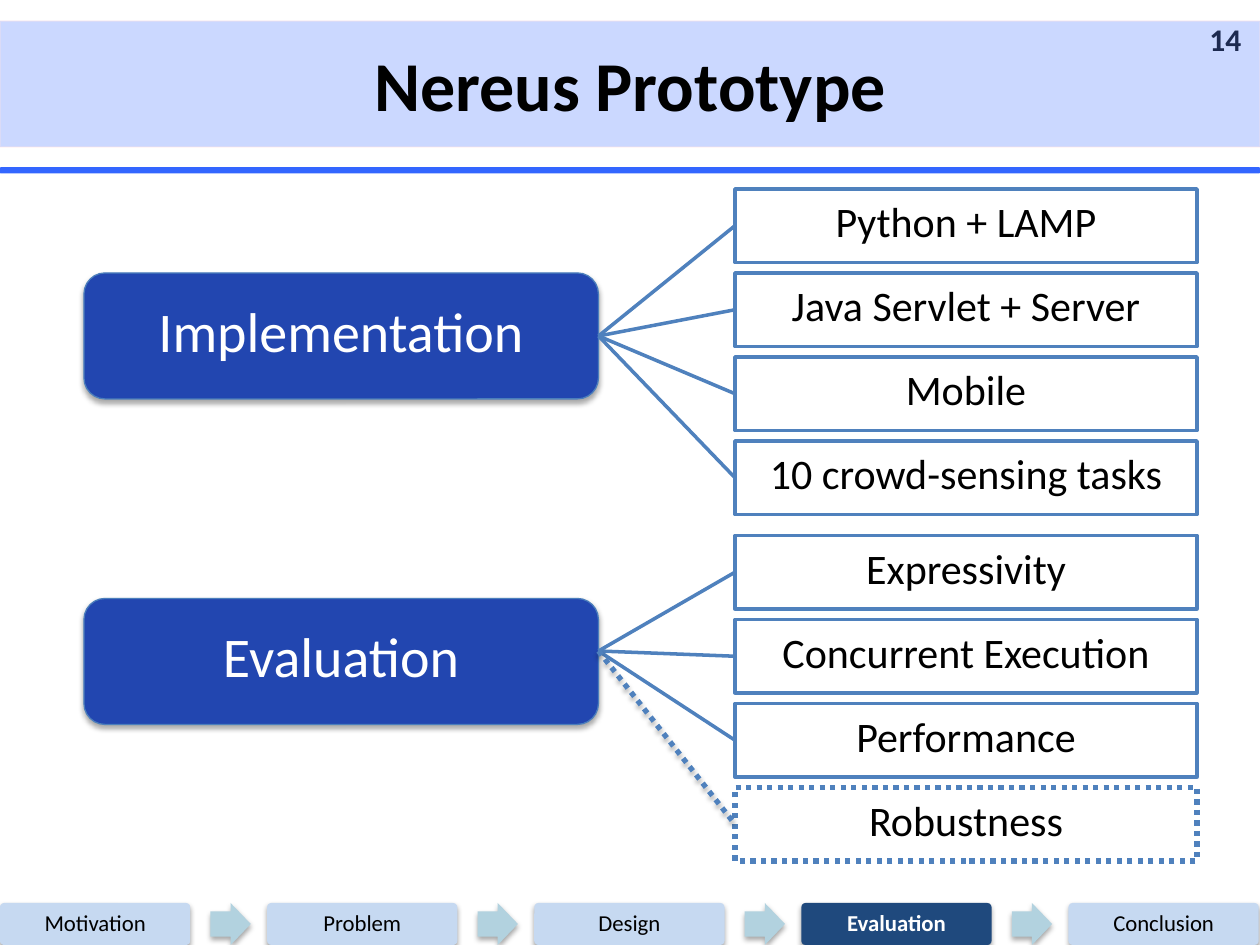
from lxml import etree
from pptx import Presentation
from pptx import util as u
from pptx.dml.color import RGBColor
from pptx.enum import dml, shapes, text
from pptx.oxml import ns

WIDTH, HEIGHT = u.Inches(10), u.Inches(7.5)
COL = WIDTH / 120  # the slide is a grid of 120 columns by 90 rows
ROW = HEIGHT / 90

BLACK = RGBColor(0x00, 0x00, 0x00)
WHITE = RGBColor(0xFF, 0xFF, 0xFF)
NUMBER_GREY = RGBColor(0x16, 0x16, 0x16)
RULE_BLUE = RGBColor(0x33, 0x66, 0xFF)
TITLE_EDGE = RGBColor(0xFF, 0xE4, 0xE5)
TOPIC_BLUE = RGBColor(0x22, 0x46, 0xB0)
TOPIC_EDGE = RGBColor(0x4B, 0x7E, 0xBC)
ITEM_EDGE = RGBColor(0x4F, 0x81, 0xBD)
STEP_BLUE = RGBColor(0xC6, 0xD9, 0xF1)
CURRENT_STEP = RGBColor(0x1F, 0x49, 0x7D)
ARROW_BLUE = RGBColor(0xB2, 0xD2, 0xDF)

SOLID = {"width": u.Pt(2)}
DOTTED = {"width": u.Pt(3), "dash_style": dml.MSO_LINE.ROUND_DOT}

TOPICS = [
    # topic, its row, row of the first item, row where the lines start, items
    ("Implementation", 26, 18, 32,
     ["Python + LAMP", "Java Servlet + Server", "Mobile", "10 crowd-sensing tasks"]),
    ("Evaluation", 57, 51, 62,
     ["Expressivity", "Concurrent Execution", "Performance", "Robustness"]),
]
DOTTED_ITEM = "Robustness"
STEPS = ["Motivation", "Problem", "Design", "Evaluation", "Conclusion"]


def grid(col, row, cols, rows):
    """Turn grid columns and rows into a box in EMU."""
    return [round(n) for n in (col * COL, row * ROW, cols * COL, rows * ROW)]


def apply(target, formats):
    for name, value in formats.items():
        setattr(target, name, value)


def set_shadow(part, visible):
    effects = etree.SubElement(part._element.spPr, ns.qn("a:effectLst"))
    if visible:
        shadow = etree.SubElement(effects, ns.qn("a:outerShdw"), blurRad=str(u.Pt(3.1)),
                                  dist=str(u.Pt(1.8)), dir="5400000", rotWithShape="0")
        black = etree.SubElement(shadow, ns.qn("a:srgbClr"), val="000000")
        etree.SubElement(black, ns.qn("a:alpha"), val="35000")


def set_opacity(color_format, percent):
    """Make a solid fill that is already coloured see-through."""
    color = color_format._xPr.find(".//" + ns.qn("a:srgbClr"))
    etree.SubElement(color, ns.qn("a:alpha"), val=str(percent * 1000))


def write(part, words, size, color, bold=False, paragraph_format=None, inset=None):
    frame = part.text_frame
    apply(frame, {"word_wrap": True, "auto_size": text.MSO_AUTO_SIZE.NONE,
                  "vertical_anchor": text.MSO_ANCHOR.MIDDLE})
    if inset is not None:
        apply(frame, dict.fromkeys(
            ("margin_left", "margin_top", "margin_right", "margin_bottom"), inset))
    paragraph = frame.paragraphs[0]
    apply(paragraph, {"alignment": text.PP_ALIGN.CENTER, "line_spacing": 0.8,
                      "space_before": u.Pt(0.2 * size), **(paragraph_format or {})})
    run = paragraph.add_run()
    run.text = words
    apply(run.font, {"name": "Calibri", "size": u.Pt(size), "bold": bold})
    run.font.color.rgb = color


def add_block(slide, kind, box, fill, edge=None, line=None, shadow=False):
    block = slide.shapes.add_shape(kind, *box)
    block.fill.solid()
    block.fill.fore_color.rgb = fill
    if edge is None:
        block.line.fill.background()
    else:
        block.line.color.rgb = edge
        apply(block.line, line)
    set_shadow(block, shadow)
    return block


def add_header(slide, box):
    """Place the rule, the slide number and, over them, the title band."""
    left, top, width, height = box
    add_block(slide, shapes.MSO_SHAPE.ROUNDED_RECTANGLE,
              (left, top + round(height * 1.16), width, round(height * 0.05)), RULE_BLUE)

    number = slide.shapes.add_textbox(left + round(width * 0.95), top,
                                      round(width * 0.05), height // 3)
    write(number, "14", 18, NUMBER_GREY, True, {"alignment": text.PP_ALIGN.LEFT})

    title = slide.shapes.title
    apply(title, dict(zip(("left", "top", "width", "height"), box)))
    title.fill.solid()
    title.fill.fore_color.rgb = RULE_BLUE
    set_opacity(title.fill, 25)
    title.line.color.rgb = TITLE_EDGE
    title.line.width = u.Pt(1)
    set_opacity(title.line.fill, 30)
    write(title, "Nereus Prototype", 40, BLACK, True, {"line_spacing": 1.0})
    slide.shapes.element.append(title.element)


def add_topic(slide, box, name, items_box, items, hub_y):
    """Place a topic and fan lines out from it to a column of items."""
    topic = add_block(slide, shapes.MSO_SHAPE.ROUNDED_RECTANGLE, box, TOPIC_BLUE,
                      TOPIC_EDGE, {"width": u.Pt(0.75)}, shadow=True)
    write(topic, name, 32, WHITE)
    hub_x = topic.left + topic.width
    starts_at_middle = hub_y == topic.top + topic.height // 2

    left, top, width, height = items_box
    pitch = height / (len(items) - 1 / 8)  # seven parts item, one part gap
    for index, words in enumerate(items):
        dotted = words == DOTTED_ITEM
        line = DOTTED if dotted else SOLID
        item_box = left, round(top + index * pitch), width, round(pitch * 7 / 8)
        item = add_block(slide, shapes.MSO_SHAPE.RECTANGLE, item_box, WHITE, ITEM_EDGE, line)
        write(item, words, 24, BLACK)

        branch = slide.shapes.add_connector(shapes.MSO_CONNECTOR.STRAIGHT, hub_x, hub_y,
                                            left, item.top + item.height // 2)
        if starts_at_middle:
            branch.begin_connect(topic, 3)
        branch.end_connect(item, 1)
        branch.line.color.rgb = ITEM_EDGE
        apply(branch.line, line)
        set_shadow(branch, dotted)


def add_progress(slide, box, steps, current):
    """Place the steps in one row with an arrow in each gap."""
    left, top, width, height = box
    pitch = width * 0.212
    for index, words in enumerate(steps):
        step_left = left + round(index * pitch)
        active = words == current
        step = add_block(slide, shapes.MSO_SHAPE.ROUNDED_RECTANGLE,
                         (step_left, top, round(width * 0.151), height),
                         CURRENT_STEP if active else STEP_BLUE, shadow=True)
        step.adjustments[0] = 0.1
        write(step, words, 13, WHITE if active else BLACK, active,
              {"line_spacing": 0.9, "space_before": u.Pt(0), "space_after": u.Pt(4.55)},
              u.Inches(0.05))
        if index < len(steps) - 1:
            arrow = add_block(slide, shapes.MSO_SHAPE.RIGHT_ARROW,
                              (step_left + round(width * 0.167), top,
                               round(width * 0.032), height), ARROW_BLUE, shadow=True)
            arrow.adjustments[0] = 0.6


def main():
    deck = Presentation()
    apply(deck, {"slide_width": WIDTH, "slide_height": HEIGHT})
    slide = deck.slides.add_slide(deck.slide_layouts[5])
    add_header(slide, grid(0, 2, 120, 12))
    for name, row, items_row, hub_row, items in TOPICS:
        add_topic(slide, grid(8, row, 49, 12), name,
                  grid(70, items_row, 44, 31), items, round(hub_row * ROW))
    add_progress(slide, grid(0, 86, 120, 4), STEPS, "Evaluation")
    deck.save("out.pptx")


if __name__ == "__main__":
    main()
